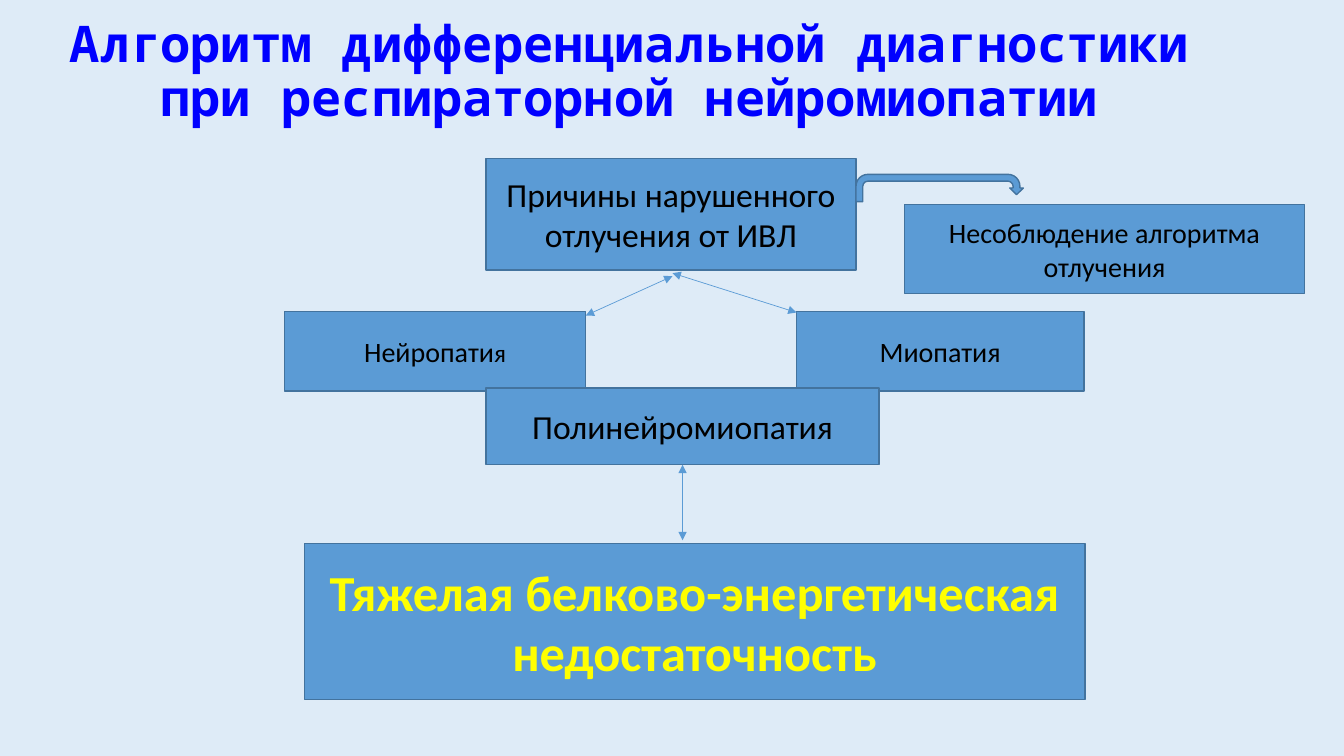
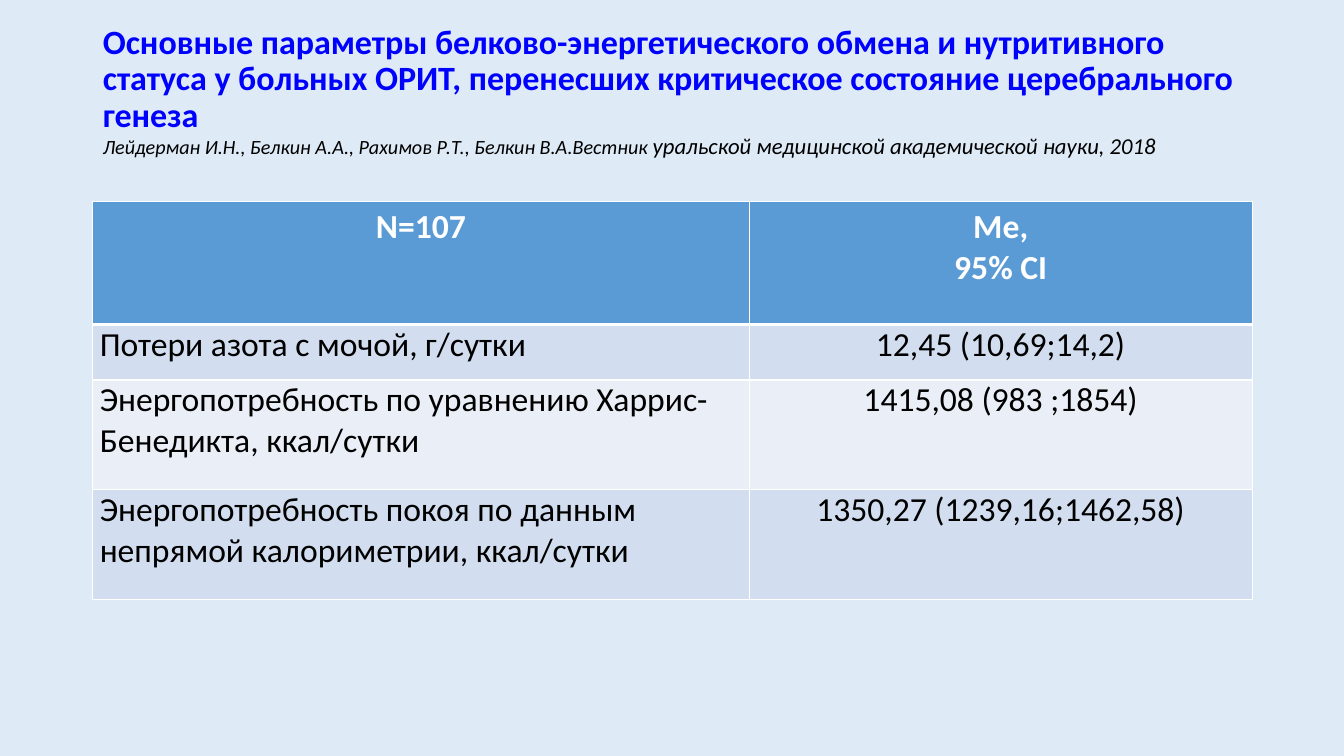
from pptx import Presentation
from pptx.dml.color import RGBColor
from pptx.enum.shapes import MSO_CONNECTOR, MSO_SHAPE
from pptx.enum.text import MSO_ANCHOR, MSO_AUTO_SIZE, PP_ALIGN
from pptx.oxml.ns import qn
from pptx.util import Inches, Pt
from lxml import etree

LEFT, CENTER = PP_ALIGN.LEFT, PP_ALIGN.CENTER
MIDDLE = MSO_ANCHOR.MIDDLE
RECT, UTURN = MSO_SHAPE.RECTANGLE, MSO_SHAPE.U_TURN_ARROW
STRAIGHT = MSO_CONNECTOR.STRAIGHT

BACK, BLUE, EDGE, TITLE = "DEEBF7", "5B9BD5", "43739E", "0000FF"
BLACK, WHITE, YELLOW = "000000", "FFFFFF", "FFFF00"
BANDS = ("D2DEEF", "EAEFF7")
SANS, MONO = "Calibri", "Noto Sans Mono"
TITLE_W, TITLE_H = 11.5, 1.45

FLOW_TITLE = [("Алгоритм дифференциальной диагностики при респираторной нейромиопатии",
               dict(size=36, font=MONO, color=TITLE, bold=True))]
BOXES = {
    "causes": ((4.82, 1.57, 3.67, 1.11),
               [("Причины нарушенного отлучения от ИВЛ", dict(size=24))]),
    "protocol": ((8.97, 2.03, 3.97, 0.88),
                 [("Несоблюдение алгоритма отлучения", dict(size=20))]),
    "neuropathy": ((2.82, 3.09, 2.99, 0.79),
                   [("Нейропати", dict(size=20)), ("я", dict(size=18))]),
    "myopathy": ((7.9, 3.09, 2.85, 0.79), [("Миопатия", dict(size=20))]),
    "deficiency": ((3.02, 5.39, 7.74, 1.55),
                   [("Тяжелая белково-энергетическая недостаточность",
                     dict(size=36, color=YELLOW, bold=True))]),
    "polyneuromyopathy": ((4.82, 3.85, 3.9, 0.76),
                          [("Полинейромиопатия", dict(size=24))]),
}
ARROWS = [
    ((6.77, 4.61), (6.77, 5.36), "polyneuromyopathy"),
    ((6.67, 2.74), (5.81, 3.13), None),
    ((6.67, 2.71), (7.9, 3.1), None),
]
TURN = (8.49, 1.73, 1.66, 0.27)

STUDY_TITLE = [
    ("Основные параметры белково-энергетического обмена и нутритивного статуса у больных ОРИТ, "
     "перенесших критическое состояние церебрального генеза",
     dict(size=24.3, color=TITLE, bold=True)),
    None,
    ("Лейдерман И.Н., Белкин А.А., Рахимов Р.Т., Белкин В.А.Вестник ",
     dict(size=14.4, italic=True)),
    ("уральской медицинской академической науки, 2018", dict(size=16.2, italic=True)),
]
COLS = (6.51, 4.99)
ROW_HEIGHTS = (1.22, 0.55, 1.09, 1.09)
ROWS = [
    ("N=107", "Me,\n95% CI"),
    ("Потери азота с мочой, г/сутки", "12,45 (10,69;14,2)"),
    ("Энергопотребность по уравнению Харрис-Бенедикта, ккал/сутки", "1415,08 (983 ;1854)"),
    ("Энергопотребность покоя по данным непрямой калориметрии, ккал/сутки",
     "1350,27 (1239,16;1462,58)"),
]


def rgb(color):
    return RGBColor.from_string(color)


def paint(shape, color):
    shape.fill.solid()
    shape.fill.fore_color.rgb = rgb(color)


def add_text(p, text, size=24, font=SANS, color=BLACK, bold=False, italic=False):
    r = p.add_run()
    r.text = text
    f = r.font
    f.size, f.name, f.bold, f.italic = Pt(size), font, bold, italic
    f.color.rgb = rgb(color)


def add_runs(p, runs, align):
    p.alignment = align
    for run in runs:
        if run is None:
            p.add_line_break()
        else:
            add_text(p, run[0], **run[1])


def add_slide(prs, left, top, runs, align):
    s = prs.slides.add_slide(prs.slide_layouts[5])
    title = s.shapes.title
    title.left, title.top = Inches(left), Inches(top)
    title.width, title.height = Inches(TITLE_W), Inches(TITLE_H)
    tf = title.text_frame
    tf.word_wrap, tf.auto_size = True, MSO_AUTO_SIZE.NONE
    tf.vertical_anchor = MIDDLE
    p = tf.paragraphs[0]
    p.line_spacing = 0.9
    add_runs(p, runs, align)
    return s


def add_figure(s, kind, place, runs=()):
    sp = s.shapes.add_shape(kind, *map(Inches, place))
    sp.shadow.inherit = False
    paint(sp, BLUE)
    sp.line.color.rgb = rgb(EDGE)
    sp.line.width = Pt(1)
    if runs:
        tf = sp.text_frame
        tf.word_wrap, tf.vertical_anchor = True, MIDDLE
        add_runs(tf.paragraphs[0], runs, CENTER)
    return sp


def add_arrow(s, start, end, source=None):
    line = s.shapes.add_connector(STRAIGHT, *map(Inches, start + end))
    if source is not None:
        line.begin_connect(source, 2)
    line.line.color.rgb = rgb(BLUE)
    line.line.width = Pt(0.5)
    ln = line.line._get_or_add_ln()
    for tag in ("a:headEnd", "a:tailEnd"):
        etree.SubElement(ln, qn(tag), type="triangle")
    etree.SubElement(line._element.spPr, qn("a:effectLst"))


def add_borders(cell, widths):
    tcPr = cell._tc.get_or_add_tcPr()
    for side, width in zip("LRTB", widths):
        ln = etree.SubElement(tcPr, qn("a:ln" + side), w=str(Pt(width)))
        fill = etree.SubElement(ln, qn("a:solidFill"))
        etree.SubElement(fill, qn("a:srgbClr"), val=WHITE)


def add_grid(s, left, top):
    table = s.shapes.add_table(len(ROWS), len(COLS), Inches(left), Inches(top),
                               Inches(sum(COLS)), Inches(sum(ROW_HEIGHTS))).table
    table.horz_banding = False
    for column, width in zip(table.columns, COLS):
        column.width = Inches(width)
    for i, (row, height) in enumerate(zip(ROWS, ROW_HEIGHTS)):
        table.rows[i].height = Inches(height)
        header = i == 0
        for j, text in enumerate(row):
            cell = table.cell(i, j)
            add_borders(cell, (1, 1, 3 if i == 1 else 1, 3 if header else 1))
            paint(cell, BLUE if header else BANDS[(i - 1) % 2])
            if not header:
                cell.margin_left = cell.margin_right = Inches(0.07)
                cell.margin_top = cell.margin_bottom = 0
            tf = cell.text_frame
            for k, part in enumerate(text.split("\n")):
                p = tf.add_paragraph() if k else tf.paragraphs[0]
                p.alignment = CENTER if header or j else LEFT
                add_text(p, part, color=WHITE if header else BLACK, bold=header)


def main():
    prs = Presentation()
    prs.slide_width, prs.slide_height = Inches(13.33), Inches(7.5)
    paint(prs.slide_master.background, BACK)

    s = add_slide(prs, 0.49, 0, FLOW_TITLE, CENTER)
    boxes = {name: add_figure(s, RECT, *box) for name, box in BOXES.items()}
    for start, end, source in ARROWS:
        add_arrow(s, start, end, boxes.get(source))
    add_figure(s, UTURN, TURN)

    s = add_slide(prs, 0.92, 0.19, STUDY_TITLE, LEFT)
    add_grid(s, 0.92, 2)
    prs.save("out.pptx")


if __name__ == "__main__":
    main()
